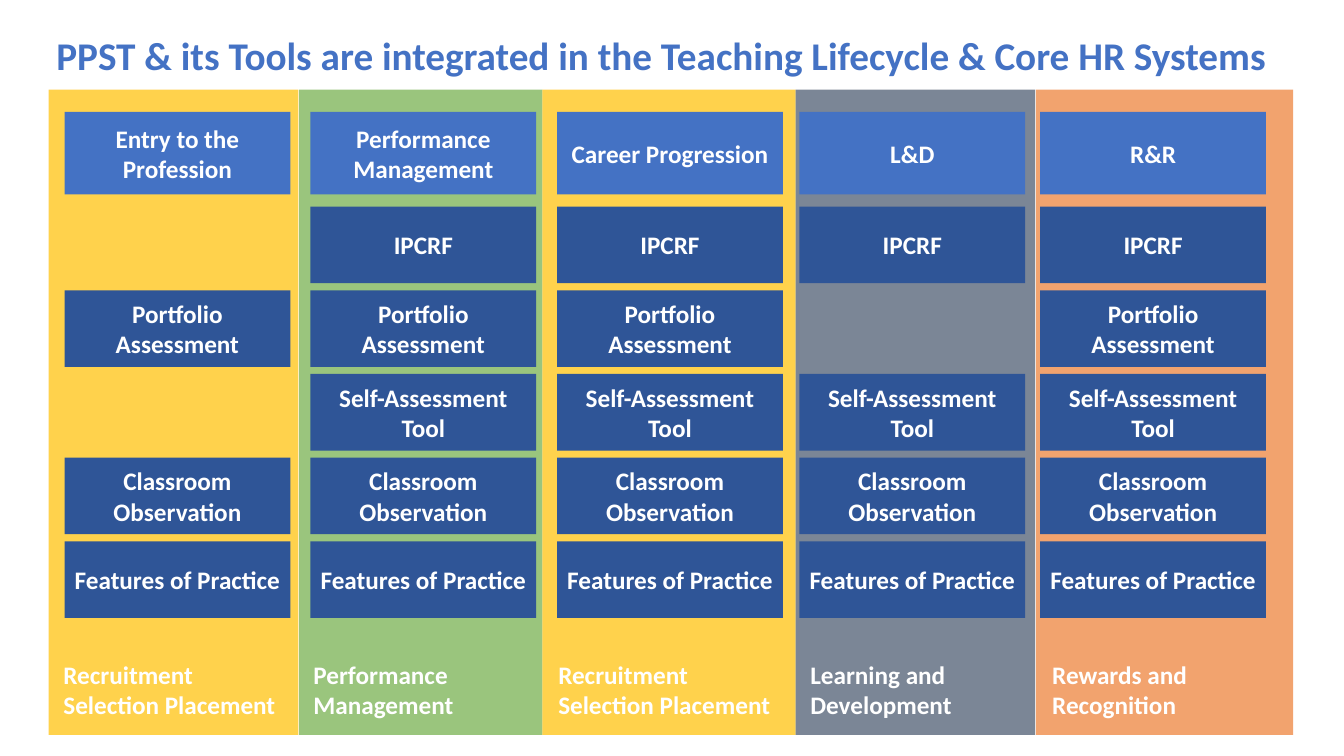
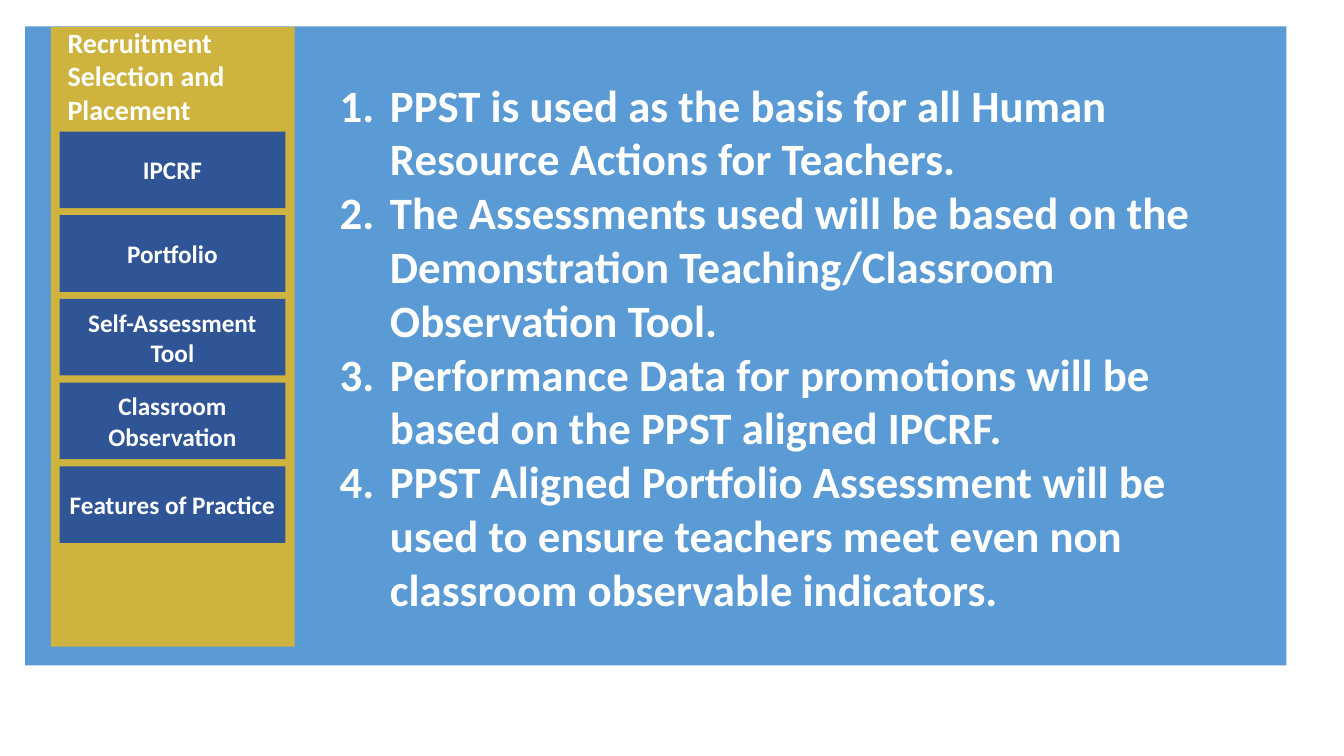
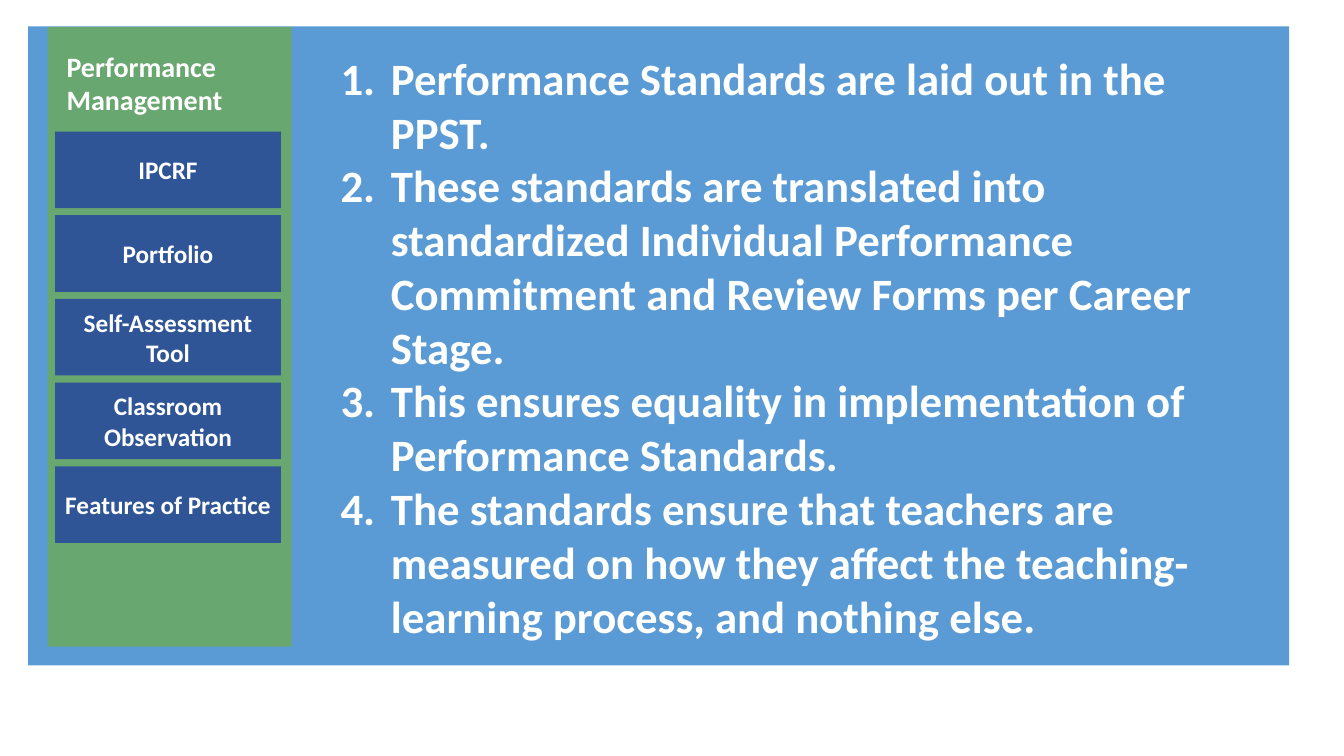
from dataclasses import dataclass

from lxml import etree
from pptx import Presentation
from pptx import util as u
from pptx.dml.color import RGBColor
from pptx.enum import shapes, text
from pptx.oxml import ns

WHITE = RGBColor(0xFF, 0xFF, 0xFF)
STAGE_BLUE = RGBColor(0x44, 0x72, 0xC4)
TOOL_BLUE = RGBColor(0x2F, 0x55, 0x97)
PANEL_BLUE = RGBColor(0x5B, 0x9B, 0xD5)
GOLD = RGBColor(0xFF, 0xC0, 0x00)
GREEN = RGBColor(0x70, 0xAD, 0x47)
SLATE = RGBColor(0x44, 0x54, 0x6A)
ORANGE = RGBColor(0xED, 0x7D, 0x31)

FONT = "Calibri"
SLIDE_WIDTH = u.Inches(13.333)
SLIDE_HEIGHT = u.Inches(7.5)
TITLE_ONLY = 5
BAND_OPACITY = 70

CARD_WIDTH = 16.8
STAGE_HEIGHT = 10.93
TOOL_HEIGHT = 10.13
TOOL_PITCH = 11.07


@dataclass(frozen=True)
class Box:
    """Position and size as percentages of the slide."""
    left: float
    top: float
    width: float
    height: float

    def emu(self) -> tuple[int, int, int, int]:
        return (int(SLIDE_WIDTH * self.left / 100), int(SLIDE_HEIGHT * self.top / 100),
                int(SLIDE_WIDTH * self.width / 100), int(SLIDE_HEIGHT * self.height / 100))


@dataclass(frozen=True)
class Stage:
    name: str
    system: str
    colour: RGBColor
    band_left: float
    band_right: float
    card_left: float
    caption_left: float
    missing: tuple[str, ...] = ()


@dataclass(frozen=True)
class Detail:
    heading: str
    heading_box: Box
    colour: RGBColor
    panel_left: float
    strip_left: float
    card_left: float
    points_left: float
    points: tuple[str, ...]


LIFECYCLE_TITLE = "PPST & its Tools are integrated in the Teaching Lifecycle & Core HR Systems"
LIFECYCLE_TOOLS = ("IPCRF", "Portfolio Assessment", "Self-Assessment Tool",
                   "Classroom Observation", "Features of Practice")
DETAIL_TOOLS = ("IPCRF", "Portfolio", "Self-Assessment Tool",
                "Classroom Observation", "Features of Practice")

STAGES = (
    Stage("Entry to the Profession", "Recruitment Selection Placement", GOLD,
          3.61, 22.21, 4.8, 3.98, ("IPCRF", "Self-Assessment Tool")),
    Stage("Performance Management", "Performance Management", GREEN,
          22.25, 40.36, 23.1, 22.58),
    Stage("Career Progression", "Recruitment Selection Placement", GOLD,
          40.36, 59.2, 41.45, 40.8),
    Stage("L&D", "Learning and Development", SLATE,
          59.2, 77.03, 59.48, 59.55, ("Portfolio Assessment",)),
    Stage("R&R", "Rewards and Recognition", ORANGE,
          77.08, 96.22, 77.4, 77.55),
)

DETAILS = (
    Detail("Recruitment Selection and Placement", Box(4.28, 4.93, 16.35, 10.13), GOLD,
           1.88, 3.78, 4.43, 24.53, (
               "PPST is used as the basis for all Human Resource Actions for Teachers.",
               "The Assessments used will be based on the Demonstration "
               "Teaching/Classroom Observation Tool.",
               "Performance Data for promotions will be based on the PPST aligned IPCRF.",
               "PPST Aligned Portfolio Assessment will be used to ensure teachers meet "
               "even non classroom observable indicators.")),
    Detail("Performance Management", Box(4.2, 5.87, 15.45, 10.13), GREEN,
           2.1, 3.55, 4.1, 24.6, (
               "Performance Standards are laid out in the PPST.",
               "These standards are translated into standardized Individual Performance "
               "Commitment and Review Forms per Career Stage.",
               "This ensures equality in implementation of Performance Standards.",
               "The standards ensure that teachers are measured on how they affect the "
               "teaching-learning process, and nothing else.")),
)


def write(shape, lines: tuple[str, ...], size: int, colour: RGBColor = WHITE,
          align=text.PP_ALIGN.LEFT, numbered: bool = False) -> None:
    frame = shape.text_frame
    frame.text = "\n".join(lines)
    frame.word_wrap = True
    frame.auto_size = text.MSO_AUTO_SIZE.NONE
    frame.vertical_anchor = text.MSO_ANCHOR.MIDDLE
    for paragraph in frame.paragraphs:
        paragraph.alignment = align
        if numbered:
            properties = paragraph._p.get_or_add_pPr()
            properties.set("marL", str(u.Inches(0.5)))
            properties.set("indent", str(-u.Inches(0.5)))
            etree.SubElement(properties, ns.qn("a:buFont"), typeface="+mj-lt")
            etree.SubElement(properties, ns.qn("a:buAutoNum"), type="arabicPeriod")
        paragraph.font.name = FONT
        paragraph.font.size = u.Pt(size)
        paragraph.font.bold = True
        paragraph.font.color.rgb = colour


def add_block(slide, box: Box, colour: RGBColor, opacity: int = 100):
    block = slide.shapes.add_shape(shapes.MSO_SHAPE.RECTANGLE, *box.emu())
    block.shadow.inherit = False
    block.fill.solid()
    block.fill.fore_color.rgb = colour
    block.line.fill.background()
    if opacity < 100:
        tint = block.element.spPr.find(".//" + ns.qn("a:srgbClr"))
        etree.SubElement(tint, ns.qn("a:alpha"), val=str(opacity * 1000))
    return block


def add_card(slide, label: str, box: Box, colour: RGBColor) -> None:
    write(add_block(slide, box, colour), (label,), 18, align=text.PP_ALIGN.CENTER)


def add_tools(slide, tools: tuple[str, ...], left: float, top: float,
              missing: tuple[str, ...] = ()) -> None:
    for row, tool in enumerate(tools):
        if tool not in missing:
            box = Box(left, top + row * TOOL_PITCH, CARD_WIDTH, TOOL_HEIGHT)
            add_card(slide, tool, box, TOOL_BLUE)


def add_text(slide, lines: tuple[str, ...], box: Box, size: int, numbered: bool = False) -> None:
    write(slide.shapes.add_textbox(*box.emu()), lines, size, numbered=numbered)


def set_title(slide, title: str, box: Box, size: int, colour: RGBColor) -> None:
    heading = slide.shapes.title
    heading.left, heading.top, heading.width, heading.height = box.emu()
    write(heading, (title,), size, colour)
    slide.shapes.element.append(heading.element)


def build_lifecycle(slide) -> None:
    for stage in STAGES:
        band = Box(stage.band_left, 11.87, stage.band_right - stage.band_left, 85.33)
        add_block(slide, band, stage.colour, BAND_OPACITY)
    for stage in STAGES:
        add_card(slide, stage.name, Box(stage.card_left, 14.8, CARD_WIDTH, STAGE_HEIGHT), STAGE_BLUE)
        add_tools(slide, LIFECYCLE_TOOLS, stage.card_left, 27.33, stage.missing)
        add_text(slide, (stage.system,), Box(stage.caption_left, 86.13, 17.63, 10.13), 18)
    set_title(slide, LIFECYCLE_TITLE, Box(3.45, 2.13, 96.53, 10.13), 28, STAGE_BLUE)


def build_detail(slide, detail: Detail) -> None:
    add_block(slide, Box(detail.panel_left, 3.5, 93.83, 84.53), PANEL_BLUE)
    add_block(slide, Box(detail.strip_left, 3.55, 18.15, 82), detail.colour, BAND_OPACITY)
    add_tools(slide, DETAIL_TOOLS, detail.card_left, 17.4)
    add_text(slide, detail.points, Box(detail.points_left, 11.73, 70.35, 68.13), 32, numbered=True)
    set_title(slide, detail.heading, detail.heading_box, 20, WHITE)


def main() -> None:
    deck = Presentation()
    deck.slide_width, deck.slide_height = SLIDE_WIDTH, SLIDE_HEIGHT
    layout = deck.slide_layouts[TITLE_ONLY]
    build_lifecycle(deck.slides.add_slide(layout))
    for detail in DETAILS:
        build_detail(deck.slides.add_slide(layout), detail)
    deck.save("out.pptx")


if __name__ == "__main__":
    main()
